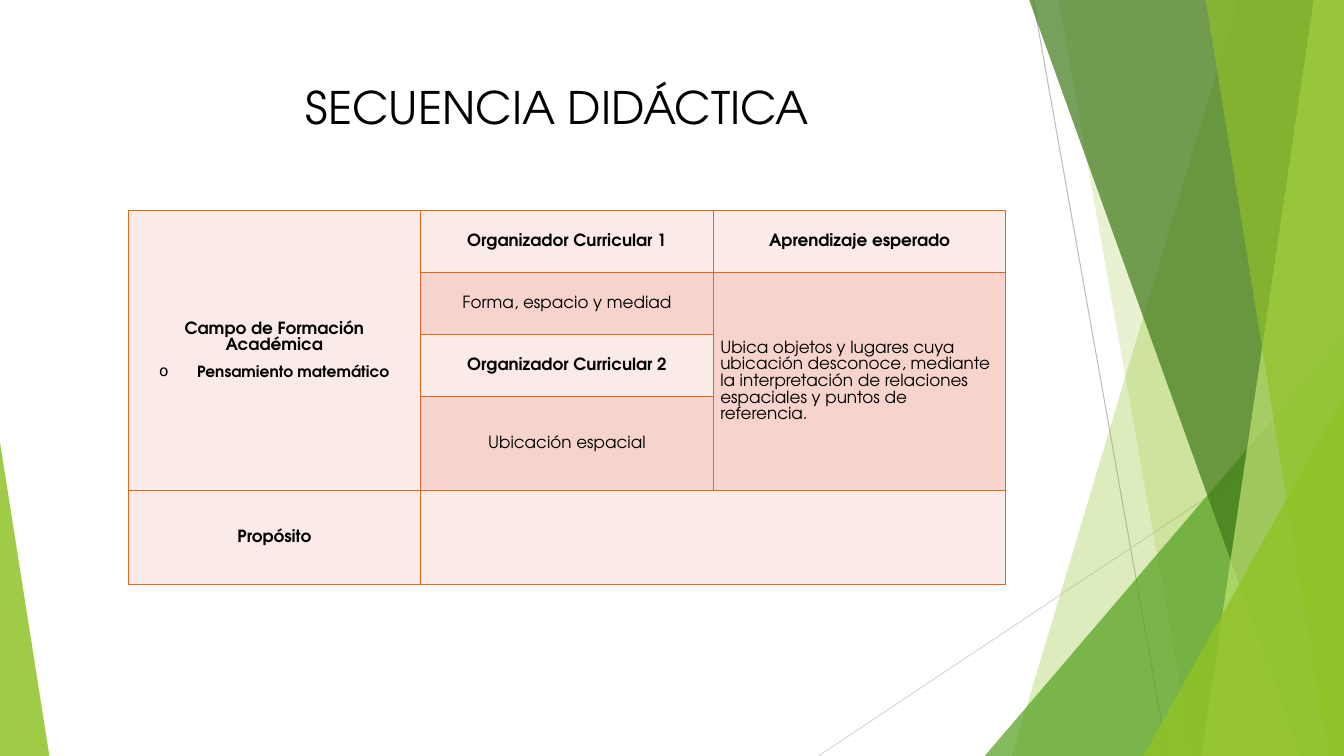
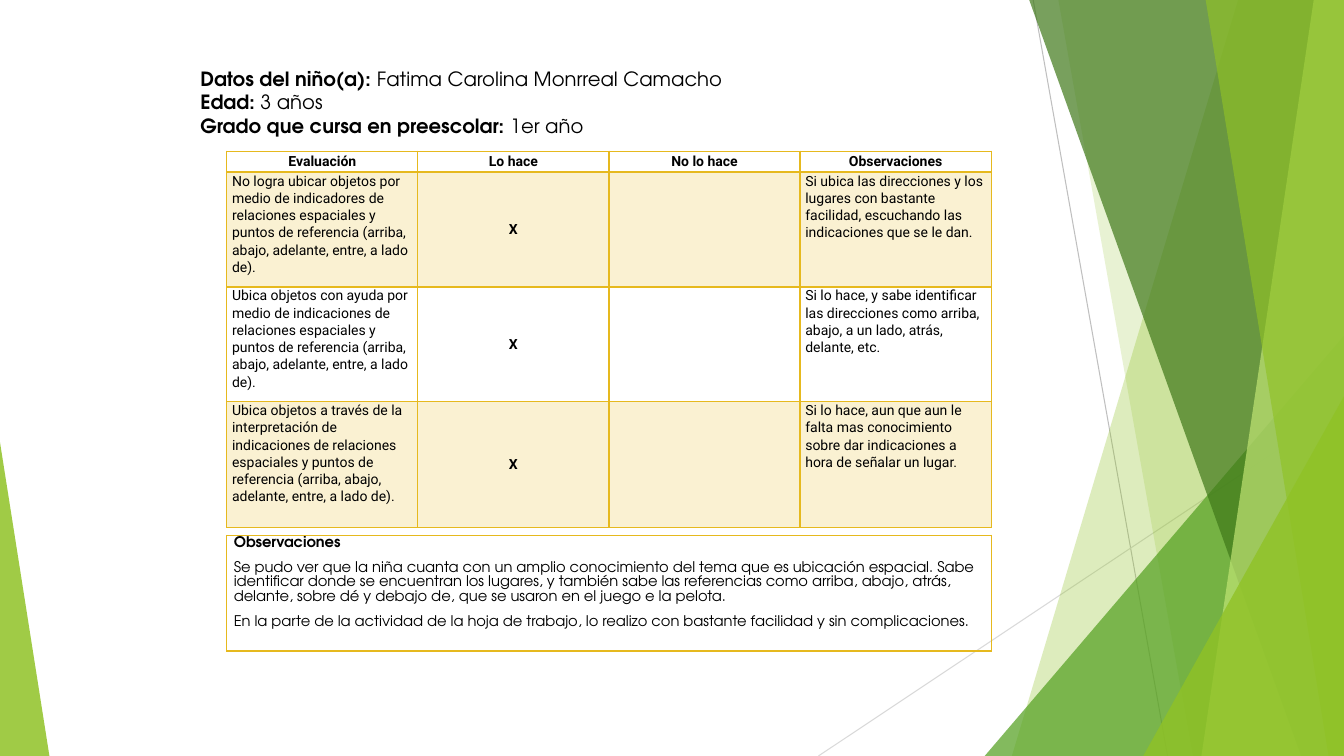
from lxml import etree
from pptx import Presentation
from pptx.dml.color import RGBColor
from pptx.enum.shapes import MSO_CONNECTOR, MSO_SHAPE
from pptx.enum.text import MSO_ANCHOR, MSO_AUTO_SIZE, PP_ALIGN
from pptx.oxml.ns import qn
from pptx.util import Pt

LEFT, CENTER = PP_ALIGN.LEFT, PP_ALIGN.CENTER
TOP, MIDDLE = MSO_ANCHOR.TOP, MSO_ANCHOR.MIDDLE
STRAIGHT = MSO_CONNECTOR.STRAIGHT
TRIANGLE = MSO_SHAPE.ISOSCELES_TRIANGLE

WIDTH, HEIGHT = 960, 540
DISPLAY_FONT, TABLE_FONT = "TeX Gyre Adventor", "Roboto"
COLORS = {
    "text": "000000", "green": "90C226", "mid_green": "54A021",
    "dark_green": "3F7819", "light_green": "C0E474",
    "gray": "BFBFBF", "light_gray": "D9D9D9",
    "orange": "E76618", "pale_pink": "FAEAE8", "pink": "F6D3CC",
    "gold": "E6B91E",
}

# Decoration, from back to front
LINES = [
    ((738, 0), (834, HEIGHT), "gray"),
    ((WIDTH, 290), (584.6, HEIGHT), "light_gray"),
]
# Bands reach the right edge: left x at the top, left x at the bottom, colour, opacity
# Triangles stand on the bottom edge: left, top, width, apex, colour, opacity
DECORATION = [
    ("band", 884.4, 722.8, "green", 30),
    ("band", 756, 852, "green", 20),
    ("triangle", 703.4, 239.8, 256.6, 1, "mid_green", 72),
    ("band", 735.2, 929.4, "dark_green", 70),
    ("band", 938.4, 858.2, "light_green", 70),
    ("band", 861.2, 949, "green", 65),
    ("triangle", 816.6, 283, 143.4, 1, "green", 80),
    ("triangle", 0, 316, 35.3, 0, "green", 85),
]

TITLE = "SECUENCIA DIDÁCTICA"
CHILD_DATA = [
    ("Datos del niño(a): ", "Fatima Carolina Monrreal Camacho"),
    ("Edad: ", "3 años"),
    ("Grado que cursa en preescolar: ", "1er año"),
]

# Sequence table: (row, column, last row, last column, fill, alignment, paragraphs)
FIELD = [
    ("Campo de Formación Académica", {"bold": True}),
    ("Pensamiento matemático", {"bold": True, "size": 11, "bullet": "o"}),
]
LEARNING = ("Ubica objetos y lugares cuya ubicación desconoce, mediante la interpretación "
            "de relaciones espaciales y puntos de referencia.")
SEQUENCE_CELLS = [
    (0, 0, 3, 0, "pale_pink", CENTER, FIELD),
    (0, 1, 0, 1, "pale_pink", CENTER, [("Organizador Curricular 1", {"bold": True})]),
    (0, 2, 0, 2, "pale_pink", CENTER, [("Aprendizaje esperado", {"bold": True})]),
    (1, 1, 1, 1, "pink", CENTER, [("Forma, espacio y mediad", {})]),
    (1, 2, 3, 2, "pink", LEFT, [(LEARNING, {})]),
    (2, 1, 2, 1, "pale_pink", CENTER, [("Organizador Curricular 2", {"bold": True})]),
    (3, 1, 3, 1, "pink", CENTER, [("Ubicación espacial", {})]),
    (4, 0, 4, 0, "pale_pink", CENTER, [("Propósito", {"bold": True})]),
    (4, 1, 4, 2, "pale_pink", CENTER, []),
]

EVALUATION_HEADER = ["Evaluación", "Lo hace", "No lo hace", "Observaciones"]
EVALUATION_ROWS = [
    ("No logra ubicar objetos por medio de indicadores de relaciones espaciales y puntos "
     "de referencia (arriba, abajo, adelante, entre, a lado de).", "X", "",
     "Si ubica las direcciones y los lugares con bastante facilidad, escuchando las "
     "indicaciones que se le dan."),
    ("Ubica objetos con ayuda por medio de indicaciones de relaciones espaciales y puntos "
     "de referencia (arriba, abajo, adelante, entre, a lado de).", "X", "",
     "Si lo hace, y sabe identificar las direcciones como arriba, abajo, a un lado, atrás, "
     "delante, etc."),
    ("Ubica objetos a través de la interpretación de indicaciones de relaciones espaciales "
     "y puntos de referencia (arriba, abajo, adelante, entre, a lado de).", "X", "",
     "Si lo hace, aun que aun le falta mas conocimiento sobre dar indicaciones a hora de "
     "señalar un lugar."),
]
REMARKS = [
    ("Observaciones", {"bold": True}),
    ("Se pudo ver que la niña cuanta con un amplio conocimiento del tema que es ubicación "
     "espacial. Sabe identificar donde se encuentran los lugares, y también sabe las "
     "referencias como arriba, abajo, atrás, delante, sobre dé y debajo de, que se usaron "
     "en el juego e la pelota.", {}),
    ("En la parte de la actividad de la hoja de trabajo, lo realizo con bastante facilidad "
     "y sin complicaciones.", {}),
]


def rgb(color):
    return RGBColor.from_string(COLORS[color])


def paint(fill, properties, color, opacity=100):
    """Fill a shape or cell; properties is the XML element that holds the fill."""
    fill.solid()
    fill.fore_color.rgb = rgb(color)
    if opacity < 100:
        color_element = properties.find(f"{qn('a:solidFill')}/{qn('a:srgbClr')}")
        etree.SubElement(color_element, qn("a:alpha"), val=str(opacity * 1000))


def add_run(paragraph, text, font, size, bold=False):
    run = paragraph.add_run()
    run.text = text
    for name, value in {"name": font, "size": Pt(size), "bold": bold}.items():
        setattr(run.font, name, value)
    run.font.color.rgb = rgb("text")


def add_bullet(paragraph, character, indent):
    properties = paragraph._p.get_or_add_pPr()
    properties.set("marL", str(Pt(indent)))
    properties.set("indent", str(-Pt(indent)))
    etree.SubElement(properties, qn("a:buChar"), char=character)


def add_band(shapes, top_x, bottom_x, color, opacity):
    builder = shapes.build_freeform(Pt(top_x), 0)
    corners = [(WIDTH, 0), (WIDTH, HEIGHT), (bottom_x, HEIGHT)]
    builder.add_line_segments([(Pt(x), Pt(y)) for x, y in corners])
    return builder.convert_to_shape(), color, opacity


def add_triangle(shapes, left, top, width, apex, color, opacity):
    shape = shapes.add_shape(TRIANGLE, Pt(left), Pt(top), Pt(width), Pt(HEIGHT - top))
    shape.adjustments[0] = apex
    return shape, color, opacity


def decorate_layout(layout, slide):
    """Draw the shared decoration on a slide, then move it to the layout."""
    for placeholder in list(layout.placeholders):
        placeholder._element.getparent().remove(placeholder._element)
    for start, end, color in LINES:
        line = slide.shapes.add_connector(STRAIGHT, *map(Pt, start + end))
        line.line.color.rgb = rgb(color)
        line.line.width = Pt(0.75)
        etree.SubElement(line._element.spPr, qn("a:effectLst"))
    builders = {"band": add_band, "triangle": add_triangle}
    for kind, *values in DECORATION:
        shape, color, opacity = builders[kind](slide.shapes, *values)
        paint(shape.fill, shape._element.spPr, color, opacity)
        shape.line.fill.background()
        shape.shadow.inherit = False
    for shape in list(slide.shapes):
        layout.shapes._spTree.append(shape._element)


def add_text_box(slide, left, top, width, height, wrap):
    box = slide.shapes.add_textbox(*map(Pt, (left, top, width, height)))
    box.text_frame.word_wrap = wrap
    box.text_frame.auto_size = MSO_AUTO_SIZE.SHAPE_TO_FIT_TEXT
    return box.text_frame


def add_table(slide, left, top, width, row_heights, column_count):
    frame = slide.shapes.add_table(len(row_heights), column_count, Pt(left), Pt(top),
                                   Pt(width), Pt(sum(row_heights)))
    table = frame.table
    table.first_row = table.horz_banding = False
    for row, height in zip(table.rows, row_heights):
        row.height = Pt(height)
    for column in table.columns:
        column.width = Pt(width / column_count)
    return table


def set_borders(cell, color, bottom_width=1):
    widths = {"lnL": 1, "lnR": 1, "lnT": 1, "lnB": bottom_width}
    for position, (side, width) in enumerate(widths.items()):
        border = etree.Element(qn(f"a:{side}"), w=str(Pt(width)))
        fill = etree.SubElement(border, qn("a:solidFill"))
        etree.SubElement(fill, qn("a:srgbClr"), val=COLORS[color])
        cell._tc.get_or_add_tcPr().insert(position, border)


def write_cell(cell, paragraphs, font, size, align=LEFT, anchor=TOP, margin=5):
    margins = {"margin_left": margin, "margin_right": margin,
               "margin_top": 0, "margin_bottom": 0}
    for name, value in margins.items():
        setattr(cell, name, Pt(value))
    cell.vertical_anchor = anchor
    frame = cell.text_frame
    for index, (text, style) in enumerate(paragraphs):
        paragraph = frame.add_paragraph() if index else frame.paragraphs[0]
        formats = {"alignment": align, "line_spacing": 1.06, "space_after": Pt(8)}
        for name, value in formats.items():
            setattr(paragraph, name, value)
        if "bullet" in style:
            add_bullet(paragraph, style["bullet"], 27)
        add_run(paragraph, text, font, style.get("size", size), style.get("bold", False))


def build_sequence_slide(slide):
    table = add_table(slide, 91.5, 150.2, 627, [44.4] * 3 + [67] * 2, 3)
    for row, column, last_row, last_column, color, align, paragraphs in SEQUENCE_CELLS:
        cell = table.cell(row, column)
        if (row, column) != (last_row, last_column):
            cell.merge(table.cell(last_row, last_column))
        write_cell(cell, paragraphs, DISPLAY_FONT, 12, align, MIDDLE)
        for covered_row in range(row, last_row + 1):
            for covered_column in range(column, last_column + 1):
                covered = table.cell(covered_row, covered_column)
                paint(covered.fill, covered._tc.tcPr, color)
                set_borders(covered, "orange")
    frame = add_text_box(slide, 211.5, 53.2, 380, 46, False)
    add_run(frame.paragraphs[0], TITLE, DISPLAY_FONT, 32)


def build_evaluation_slide(slide):
    frame = add_text_box(slide, 136, 44, 510.5, 58.3, True)
    for index, (label, value) in enumerate(CHILD_DATA):
        paragraph = frame.add_paragraph() if index else frame.paragraphs[0]
        add_run(paragraph, label, DISPLAY_FONT, 14, True)
        add_run(paragraph, value, DISPLAY_FONT, 14)

    left, width = 162, 546
    table = add_table(slide, left, 108, width, [15, 82, 82, 90], len(EVALUATION_HEADER))
    for row, texts in enumerate([EVALUATION_HEADER, *EVALUATION_ROWS]):
        for column, text in enumerate(texts):
            cell = table.cell(row, column)
            centered = row == 0 or column in (1, 2)
            paragraphs = [(text, {"bold": centered})] if text or row == 0 else []
            write_cell(cell, paragraphs, TABLE_FONT, 10, CENTER if centered else LEFT,
                       MIDDLE if centered else TOP, 3.8)
            if row % 2:
                paint(cell.fill, cell._tc.tcPr, "gold", 20)
            else:
                cell.fill.background()
            set_borders(cell, "gold", 1 if row else 2)

    remarks = add_table(slide, left, 382.5, width, [82.4], 1).cell(0, 0)
    write_cell(remarks, REMARKS, DISPLAY_FONT, 10.5)
    remarks.fill.background()
    set_borders(remarks, "gold", 2)


def main():
    presentation = Presentation()
    presentation.slide_width, presentation.slide_height = Pt(WIDTH), Pt(HEIGHT)
    blank = presentation.slide_layouts[6]
    slides = [presentation.slides.add_slide(blank) for _ in range(2)]
    decorate_layout(blank, slides[0])
    build_sequence_slide(slides[0])
    build_evaluation_slide(slides[1])
    presentation.save("out.pptx")


if __name__ == "__main__":
    main()
